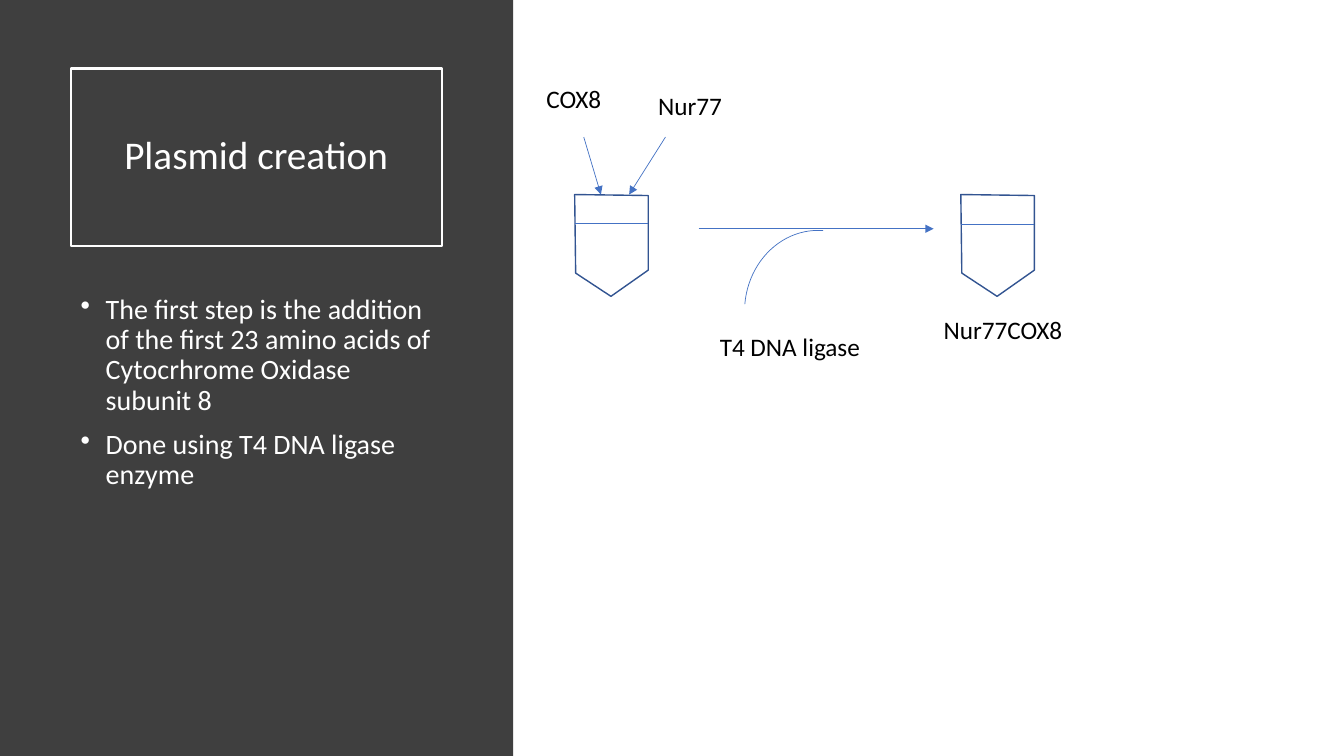
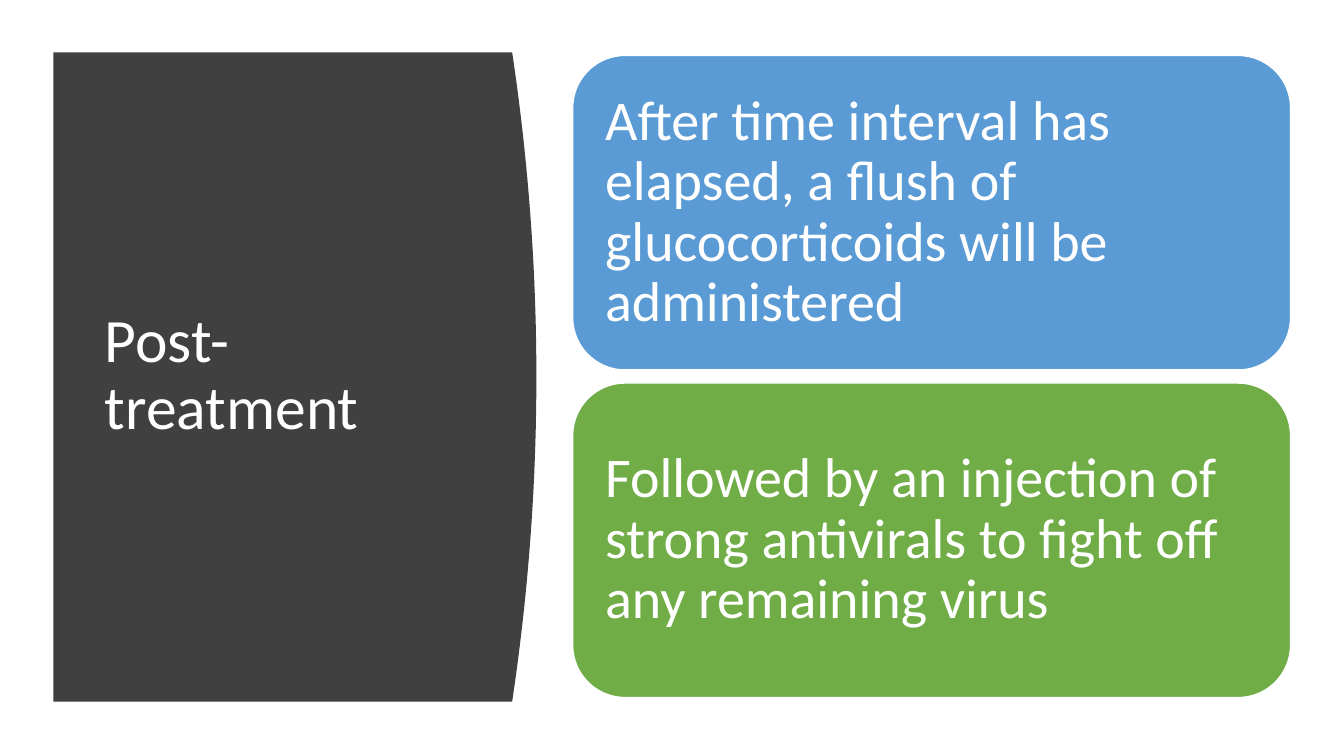
from dataclasses import dataclass
from typing import Any

from lxml import etree
from pptx import Presentation
from pptx import util as u
from pptx.dml import color
from pptx.enum import shapes, text
from pptx.oxml import ns

COLORS = {
    "panel": "3F3F3F",
    "curve": "404040",
    "white": "FFFFFF",
    "black": "000000",
    "arrow": "4472C4",
    "plasmid": "325491",
    "blue": "5B9BD5",
    "green": "70AD47",
}
FONT = "Calibri"
TITLE_ONLY = 5
MIDDLE = text.MSO_ANCHOR.MIDDLE
LEFT = text.PP_ALIGN.LEFT
CENTER = text.PP_ALIGN.CENTER


@dataclass(frozen=True)
class Box:
    left: float
    top: float
    width: float
    height: float

    def emu(self) -> list[int]:
        return [u.Inches(v) for v in (self.left, self.top, self.width, self.height)]


@dataclass(frozen=True)
class Label:
    words: str
    box: Box


@dataclass(frozen=True)
class Link:
    start: tuple[float, float]
    end: tuple[float, float]
    arrow: bool = True


@dataclass(frozen=True)
class Card:
    words: str
    fill: str


LABELS = [
    Label("COX8", Box(5.32, 0.78, 0.75, 0.4)),
    Label("Nur77", Box(6.43, 0.85, 0.84, 0.4)),
    Label("T4 DNA ligase", Box(7.04, 3.24, 1.61, 0.4)),
    Label("Nur77COX8", Box(9.26, 3.07, 1.39, 0.4)),
]
PLASMID_TOP = 1.93
PLASMID_OUTLINE = [(0, 0), (0.73, 0.01), (0.73, 0.75), (0.36, 1.01), (0.01, 0.78)]
PLASMIDS = [(5.7, 2.22), (9.53, 2.23)]
LINKS = [
    Link((5.79, 1.36), (5.96, PLASMID_TOP)),
    Link((6.6, 1.36), (6.24, PLASMID_TOP)),
    Link((6.93, 2.27), (9.26, 2.27)),
] + [Link((left, y), (left + 0.73, y), False) for left, y in PLASMIDS]
STEPS = [
    "The first step is the addition of the first 23 amino acids of Cytocrhrome Oxidase subunit 8",
    "Done using T4 DNA ligase enzyme",
]
CARDS = [
    Card("After time interval has elapsed, a flush of glucocorticoids will be administered", "blue"),
    Card("Followed by an injection of strong antivirals to fight off any remaining virus", "green"),
]


def rgb(name: str) -> color.RGBColor:
    return color.RGBColor.from_string(COLORS[name])


def apply(target: Any, values: dict[str, Any]) -> None:
    for name, value in values.items():
        setattr(target, name, value)


def paint(shape: Any, fill: str | None = None, line: str | None = None, width: float = 1) -> None:
    shape.shadow.inherit = False
    if fill:
        shape.fill.solid()
        shape.fill.fore_color.rgb = rgb(fill)
    else:
        shape.fill.background()
    if line:
        shape.line.color.rgb = rgb(line)
        shape.line.width = u.Pt(width)
    else:
        shape.line.fill.background()


def write(shape: Any, lines: list[str], size: float, tint: str, frame: dict[str, Any],
          paragraph: dict[str, Any]) -> None:
    body = shape.text_frame
    body.text = "\n".join(lines)
    apply(body, {"auto_size": text.MSO_AUTO_SIZE.NONE, "word_wrap": True} | frame)
    for item in body.paragraphs:
        apply(item, paragraph)
        apply(item.runs[0].font, {"name": FONT, "size": u.Pt(size)})
        item.runs[0].font.color.rgb = rgb(tint)


def place_title(slide: Any, words: str, box: Box, size: float, align: Any, backdrop: Any) -> Any:
    title = slide.shapes.title
    apply(title, dict(zip(("left", "top", "width", "height"), box.emu())))
    write(title, [words], size, "white", {"vertical_anchor": MIDDLE},
          {"alignment": align, "line_spacing": 0.9})
    title.element.addprevious(backdrop.element)
    return title


def add_outline(slide: Any, points: list[tuple[float, float]]) -> Any:
    corners = [(u.Inches(x), u.Inches(y)) for x, y in points]
    builder = slide.shapes.build_freeform(*corners[0], scale=1.0)
    builder.add_line_segments(corners[1:], close=True)
    return builder.convert_to_shape()


def add_link(slide: Any, link: Link) -> None:
    ends = [u.Inches(v) for v in link.start + link.end]
    connector = slide.shapes.add_connector(shapes.MSO_CONNECTOR.STRAIGHT, *ends)
    connector.line.color.rgb = rgb("arrow")
    connector.line.width = u.Pt(0.5)
    if link.arrow:
        etree.SubElement(connector.line._get_or_add_ln(), ns.qn("a:tailEnd"), type="triangle")
    etree.SubElement(connector.element.spPr, ns.qn("a:effectLst"))


def add_bullets(slide: Any, lines: list[str], box: Box) -> None:
    steps = slide.shapes.add_textbox(*box.emu())
    write(steps, lines, 20, "white", {},
          {"alignment": LEFT, "line_spacing": 0.9, "space_before": u.Pt(10)})
    for paragraph in steps.text_frame.paragraphs:
        properties = paragraph._p.get_or_add_pPr()
        properties.set("marL", str(u.Inches(0.25)))
        properties.set("indent", str(u.Inches(-0.25)))
        etree.SubElement(properties, ns.qn("a:buChar"), char="•")


def build_plasmid(slide: Any) -> None:
    panel = slide.shapes.add_shape(shapes.MSO_SHAPE.RECTANGLE, *Box(0, 0, 5.09, 7.5).emu())
    paint(panel, "panel")
    title = place_title(slide, "Plasmid creation", Box(0.7, 0.68, 3.68, 1.76), 28, CENTER, panel)
    title.line.color.rgb = rgb("white")
    title.line.width = u.Pt(1.5)
    add_bullets(slide, STEPS, Box(0.7, 2.88, 3.68, 3.74))
    for left, _ in PLASMIDS:
        plasmid = add_outline(slide, [(left + x, PLASMID_TOP + y) for x, y in PLASMID_OUTLINE])
        paint(plasmid, "white", "plasmid")
    for link in LINKS:
        add_link(slide, link)
    ligase_curve = slide.shapes.add_shape(shapes.MSO_SHAPE.ARC, *Box(7.31, 2.36, 1.58, 1.43).emu())
    paint(ligase_curve, line="arrow", width=0.5)
    ligase_curve.rotation = 274.7
    for label in LABELS:
        caption = slide.shapes.add_textbox(*label.box.emu())
        write(caption, [label.words], 18, "black", {"word_wrap": False}, {"alignment": LEFT})


def build_treatment(slide: Any) -> None:
    left, edge, bulge, top, height, pieces = 0.53, 5.08, 0.24, 0.52, 6.44, 40
    arc = [(edge + bulge * (1 - (2 * i / pieces - 1) ** 2), top + height * i / pieces)
           for i in range(pieces + 1)]
    panel = add_outline(slide, [(left, top), *arc, (left, top + height)])
    paint(panel, "curve")
    place_title(slide, "Post-treatment", Box(0.94, 1.11, 3.74, 5.24), 44, LEFT, panel)
    inset = u.Inches(0.17)
    frame = {f"margin_{side}": inset for side in ("left", "top", "right", "bottom")}
    for row, card in enumerate(CARDS):
        box = Box(5.68, 0.55 + row * 3.25, 7.12, 3.12)
        panel = slide.shapes.add_shape(shapes.MSO_SHAPE.ROUNDED_RECTANGLE, *box.emu())
        paint(panel, card.fill, "white")
        write(panel, [card.words], 40, "white", frame | {"vertical_anchor": MIDDLE},
              {"alignment": LEFT, "line_spacing": 0.9})


def main() -> None:
    deck = Presentation()
    apply(deck, {"slide_width": u.Inches(13.33), "slide_height": u.Inches(7.5)})
    for build in (build_plasmid, build_treatment):
        build(deck.slides.add_slide(deck.slide_layouts[TITLE_ONLY]))
    deck.save("out.pptx")


if __name__ == "__main__":
    main()
